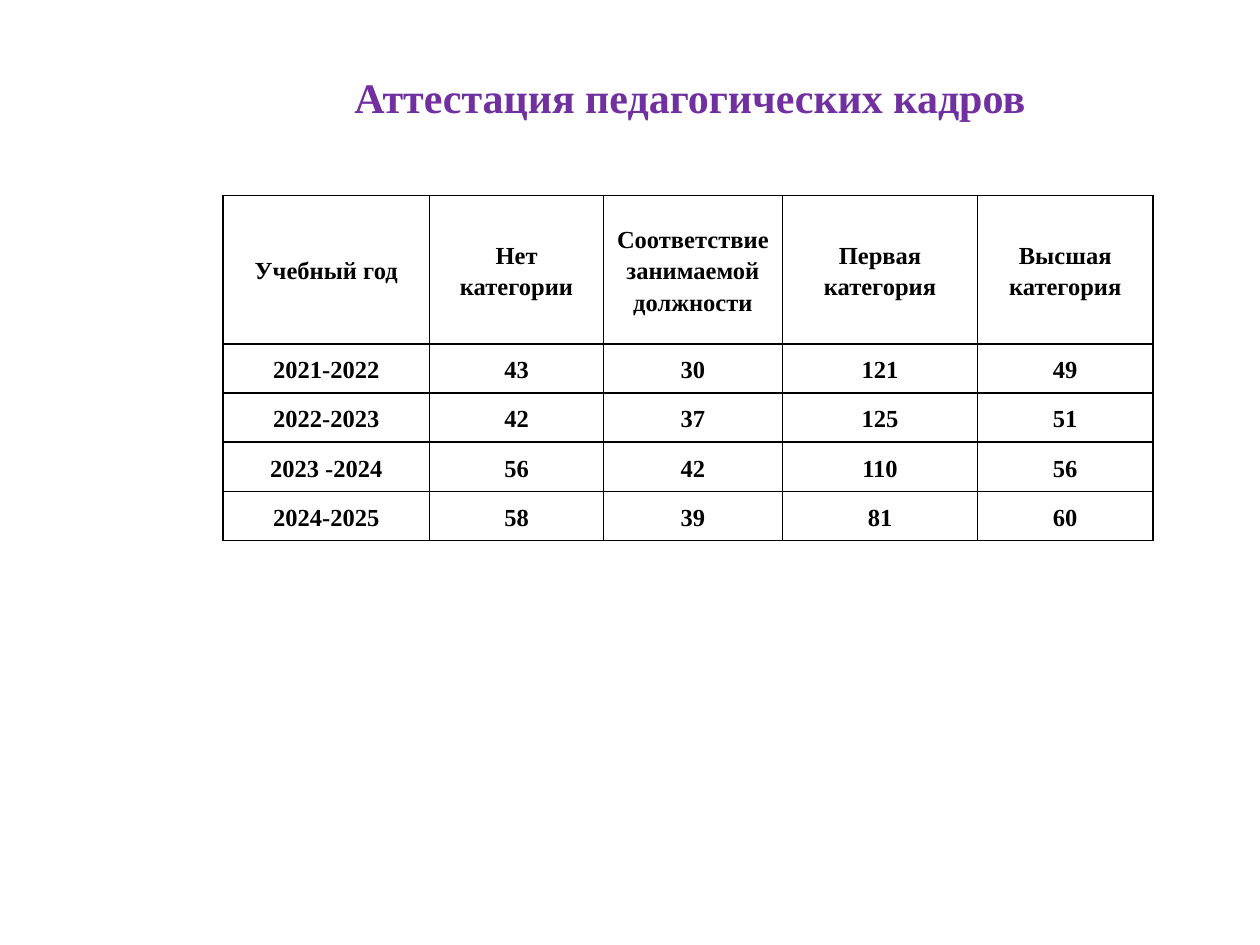
from dataclasses import dataclass

from lxml.etree import SubElement
from pptx import Presentation
from pptx.dml.color import RGBColor
from pptx.enum.text import MSO_ANCHOR, MSO_AUTO_SIZE, PP_ALIGN
from pptx.oxml.ns import qn
from pptx.util import Inches, Pt


@dataclass(frozen=True)
class Theme:
    font: str = "Times New Roman"
    heading: str = "7030A0"
    ink: str = "000000"
    heading_size: int = 24
    cell_size: int = 14
    border_width: int = 1


THEME = Theme()
HEADING = "Аттестация педагогических кадров"
HEADERS = ("Учебный год", "Нет категории", "Соответствие занимаемой должности",
           "Первая категория", "Высшая категория")
YEARS = (
    ("2021-2022", 43, 30, 121, 49),
    ("2022-2023", 42, 37, 125, 51),
    ("2023 -2024", 56, 42, 110, 56),
    ("2024-2025", 58, 39, 81, 60),
)
COLUMN_WIDTHS = (1.64, 1.38, 1.42, 1.55, 1.39)
ROW_HEIGHTS = (1.18,) + (0.39,) * len(YEARS)


def apply_format(target, values):
    for attribute, value in values.items():
        setattr(target, attribute, value)


def format_font(paragraph, size, color):
    apply_format(paragraph.font, {"name": THEME.font, "size": Pt(size), "bold": True})
    paragraph.font.color.rgb = RGBColor.from_string(color)


def add_heading(slide):
    heading = slide.shapes.title
    apply_format(heading, {"left": Inches(1.3), "top": Inches(0.52),
                           "width": Inches(8.35), "height": Inches(0.5)})
    frame = heading.text_frame
    frame.text = HEADING
    apply_format(frame, {"word_wrap": True, "auto_size": MSO_AUTO_SIZE.SHAPE_TO_FIT_TEXT,
                         "vertical_anchor": MSO_ANCHOR.MIDDLE})
    frame.paragraphs[0].alignment = PP_ALIGN.CENTER
    format_font(frame.paragraphs[0], THEME.heading_size, THEME.heading)


def add_borders(cell):
    properties = cell._tc.get_or_add_tcPr()
    for side in ("a:lnL", "a:lnR", "a:lnT", "a:lnB"):
        border = SubElement(properties, qn(side), w=str(Pt(THEME.border_width)))
        fill = SubElement(border, qn("a:solidFill"))
        SubElement(fill, qn("a:srgbClr"), val=THEME.ink)


def fill_cell(cell, value):
    cell.text = str(value)
    apply_format(cell, {"margin_left": Inches(0.07), "margin_right": Inches(0.07),
                        "margin_top": 0, "margin_bottom": 0,
                        "vertical_anchor": MSO_ANCHOR.MIDDLE})
    paragraph = cell.text_frame.paragraphs[0]
    apply_format(paragraph, {"alignment": PP_ALIGN.CENTER, "line_spacing": 1.15,
                             "space_after": Pt(10)})
    format_font(paragraph, THEME.cell_size, THEME.ink)
    add_borders(cell)
    cell.fill.background()


def add_category_table(slide):
    records = (HEADERS, *YEARS)
    table = slide.shapes.add_table(
        len(records), len(HEADERS), Inches(1.77), Inches(1.55),
        Inches(sum(COLUMN_WIDTHS)), Inches(sum(ROW_HEIGHTS))).table
    apply_format(table, {"first_row": False, "horz_banding": False})
    for column, width in zip(table.columns, COLUMN_WIDTHS):
        column.width = Inches(width)
    for row, height, record in zip(table.rows, ROW_HEIGHTS, records):
        row.height = Inches(height)
        for cell, value in zip(row.cells, record):
            fill_cell(cell, value)


def main():
    presentation = Presentation()
    apply_format(presentation, {"slide_width": Inches(10), "slide_height": Inches(7.5)})
    slide = presentation.slides.add_slide(presentation.slide_layouts[5])
    add_heading(slide)
    add_category_table(slide)
    presentation.save("out.pptx")


if __name__ == "__main__":
    main()
